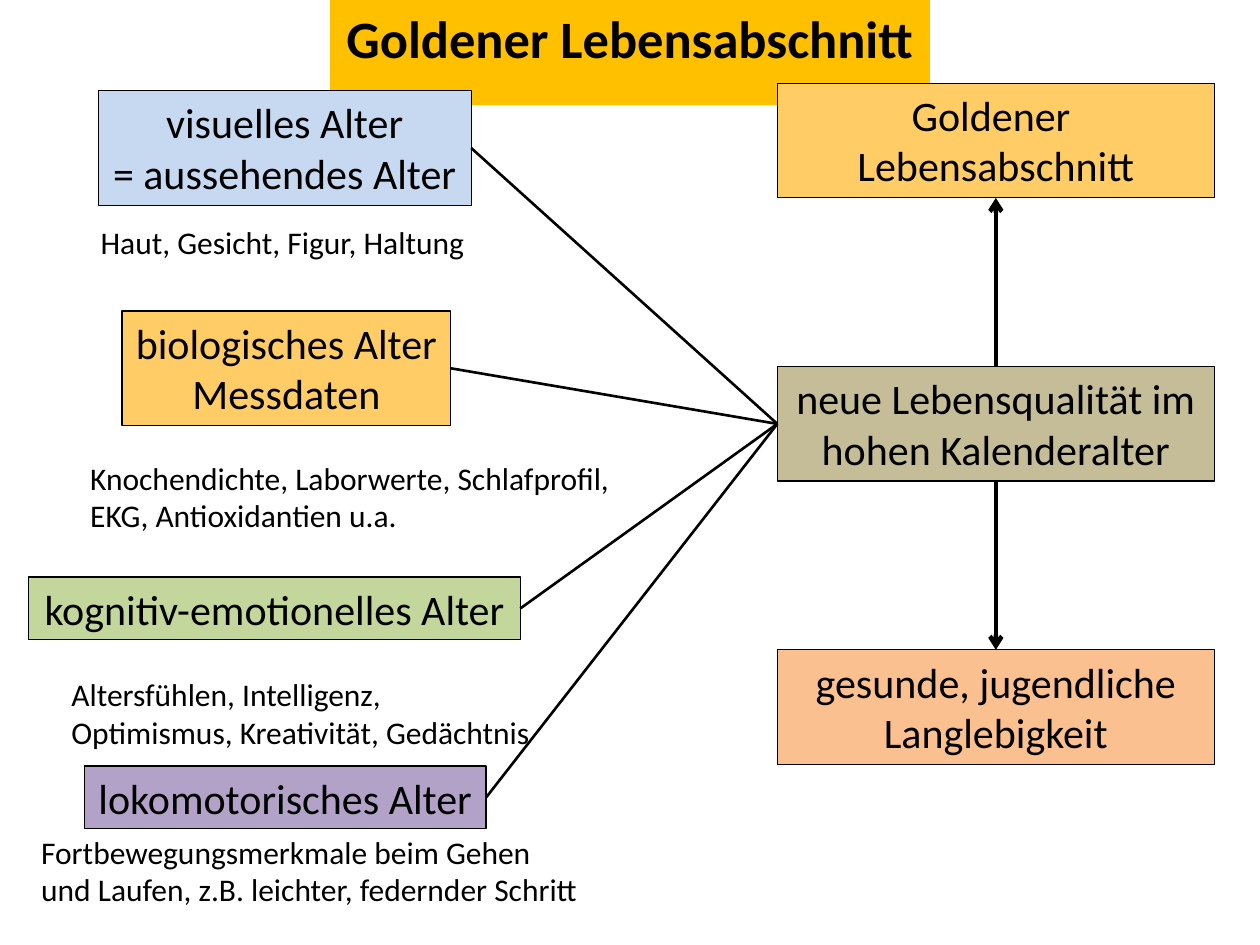
from pptx import Presentation
from pptx.dml.color import RGBColor
from pptx.enum.shapes import MSO_CONNECTOR as CONN, MSO_SHAPE as SHAPE
from pptx.enum.text import MSO_ANCHOR as ANCHOR, MSO_AUTO_SIZE as FIT, PP_ALIGN as ALIGN
from pptx.oxml.ns import qn
from pptx.util import Cm, Pt
from lxml.etree import SubElement

BLACK = RGBColor(0x00, 0x00, 0x00)
GOLD = RGBColor(0xFF, 0xC0, 0x00)
BLUE = RGBColor(0xC6, 0xD9, 0xF1)
YELLOW = RGBColor(0xFF, 0xCC, 0x66)
GREEN = RGBColor(0xC3, 0xD6, 0x9B)
PURPLE = RGBColor(0xB3, 0xA2, 0xC7)
TAN = RGBColor(0xC4, 0xBD, 0x97)
ORANGE = RGBColor(0xFA, 0xC0, 0x90)

TITLE_FONT = {"name": "Calibri", "size": Pt(30), "bold": True}
BOX_FONT = {"name": "Calibri", "size": Pt(24), "bold": False}
NOTE_FONT = {"name": "Calibri", "size": Pt(18), "bold": False}

SLIDE_W, SLIDE_H = 25.4, 19.05
ONE_LINE, TWO_LINES = 1.27, 2.31

# Kinds of age: lines, fill, left, top, width, height
AGES = [
    (["visuelles Alter", "= aussehendes Alter"], BLUE, 1.98, 1.83, 7.52, TWO_LINES),
    (["biologisches Alter", "Messdaten"], YELLOW, 2.46, 6.27, 6.63, TWO_LINES),
    (["kognitiv-emotionelles Alter"], GREEN, 0.58, 11.63, 9.91, ONE_LINE),
    (["lokomotorisches Alter"], PURPLE, 1.7, 15.44, 8.1, ONE_LINE),
]
# Explanations: lines, left, top, width, height
NOTES = [
    (["Haut, Gesicht, Figur, Haltung"], 1.78, 4.37, 7.92, 1.02),
    (["Knochendichte, Laborwerte, Schlafprofil,", "EKG, Antioxidantien u.a."],
     1.57, 9.12, 11.1, 1.8),
    (["Altersfühlen, Intelligenz,", "Optimismus, Kreativität, Gedächtnis"],
     1.19, 13.49, 9.86, 1.8),
    (["Fortbewegungsmerkmale beim Gehen", "und Laufen, z.B. leichter, federnder Schritt"],
     0.58, 16.66, 11.48, 1.8),
]
# Right column, evenly spaced from top to bottom
GOALS = [
    (["Goldener ", "Lebensabschnitt"], YELLOW),
    (["neue Lebensqualität im hohen Kalenderalter"], TAN),
    (["gesunde, jugendliche Langlebigkeit"], ORANGE),
]
GOAL_LEFT, GOAL_TOP, GOAL_W, GOAL_STEP = 15.67, 1.68, 8.81, 5.71


def write(sp, lines, font, align, wrap=False):
    tf = sp.text_frame
    frame = {"word_wrap": wrap, "auto_size": FIT.SHAPE_TO_FIT_TEXT,
             "vertical_anchor": ANCHOR.TOP}
    for key, value in frame.items():
        setattr(tf, key, value)
    for i, line in enumerate(lines):
        p = tf.add_paragraph() if i else tf.paragraphs[0]
        p.alignment = align
        r = p.add_run()
        r.text = line
        for key, value in font.items():
            setattr(r.font, key, value)
        r.font.color.rgb = BLACK


def fill_with(sp, color):
    sp.fill.solid()
    sp.fill.fore_color.rgb = color


def add_title(slide, text):
    sp = slide.shapes.title
    width = 12.09
    place = {"left": Cm((SLIDE_W - width) / 2), "top": Cm(0),
             "width": Cm(width), "height": Cm(1.55)}
    for key, value in place.items():
        setattr(sp, key, value)
    fill_with(sp, GOLD)
    write(sp, [text], TITLE_FONT, ALIGN.CENTER)


def add_box(slide, lines, color, left, top, width, height, wrap=False):
    sp = slide.shapes.add_shape(SHAPE.RECTANGLE, Cm(left), Cm(top), Cm(width), Cm(height))
    sp.shadow.inherit = False
    fill_with(sp, color)
    sp.line.color.rgb = BLACK
    sp.line.width = Pt(0.75)
    write(sp, lines, BOX_FONT, ALIGN.CENTER, wrap)
    return sp


def add_note(slide, lines, left, top, width, height):
    sp = slide.shapes.add_textbox(Cm(left), Cm(top), Cm(width), Cm(height))
    write(sp, lines, NOTE_FONT, ALIGN.LEFT)


def join(slide, start, start_site, end, end_site, weight, arrow=False):
    line = slide.shapes.add_connector(CONN.STRAIGHT, 0, 0, 0, 0)
    line.begin_connect(start, start_site)
    line.end_connect(end, end_site)
    line.line.color.rgb = BLACK
    line.line.width = Pt(weight)
    sp_pr = line._element.spPr
    if arrow:
        SubElement(sp_pr.find(qn("a:ln")), qn("a:tailEnd"), type="arrow")
    SubElement(sp_pr, qn("a:effectLst"))


def main():
    prs = Presentation()
    prs.slide_width, prs.slide_height = Cm(SLIDE_W), Cm(SLIDE_H)
    slide = prs.slides.add_slide(prs.slide_layouts[5])
    add_title(slide, "Goldener Lebensabschnitt")

    # Boxes on both sides
    ages = [add_box(slide, *age) for age in AGES]
    golden, quality, longevity = [
        add_box(slide, lines, color, GOAL_LEFT, GOAL_TOP + i * GOAL_STEP,
                GOAL_W, TWO_LINES, wrap=True)
        for i, (lines, color) in enumerate(GOALS)
    ]

    # Every age leads to the quality of life, which leads up and down
    for age in ages:
        join(slide, age, 3, quality, 1, 1.5)
    join(slide, quality, 2, longevity, 0, 2.5, arrow=True)
    join(slide, quality, 0, golden, 2, 2.5, arrow=True)

    for note in NOTES:
        add_note(slide, *note)
    prs.save("out.pptx")


if __name__ == "__main__":
    main()
